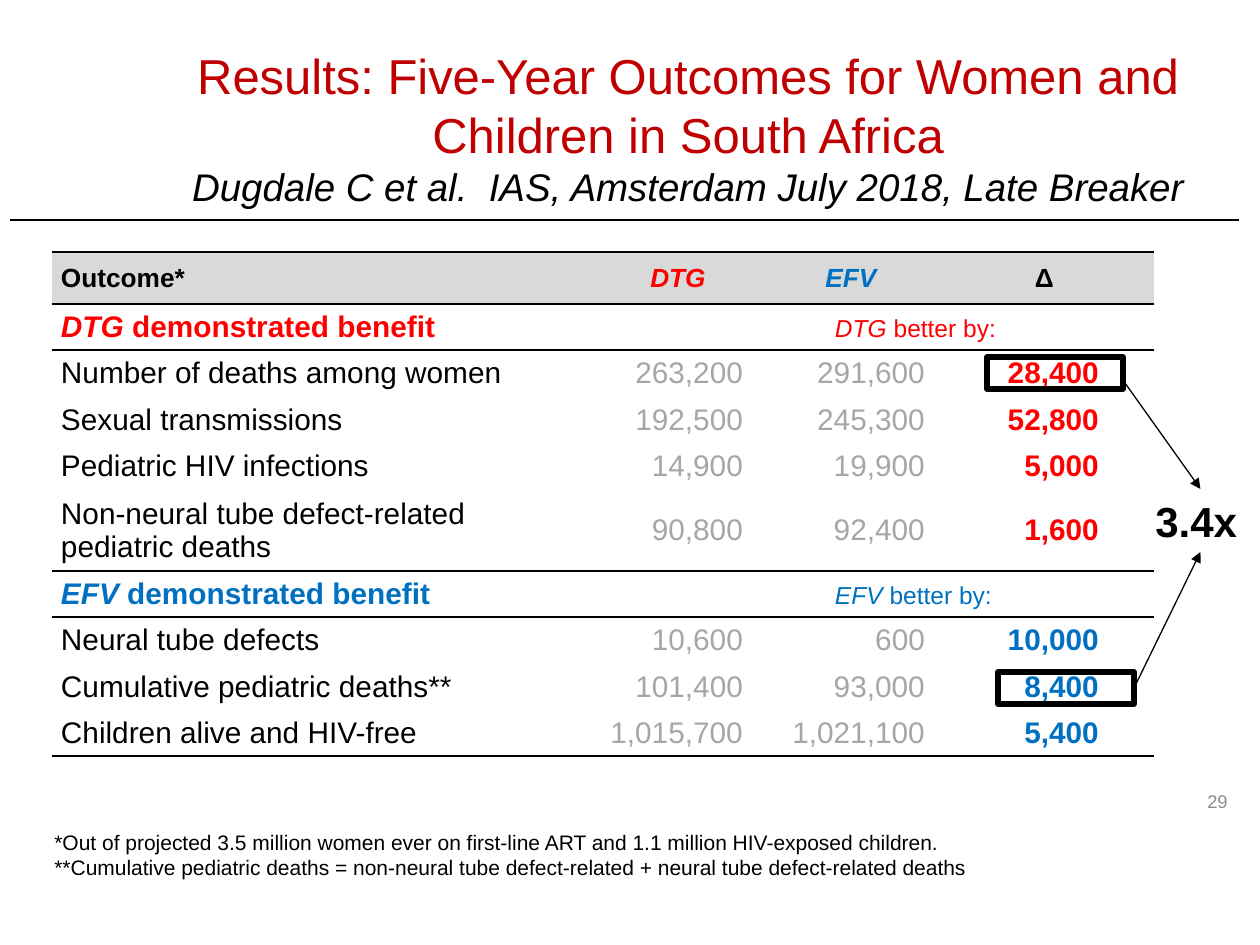
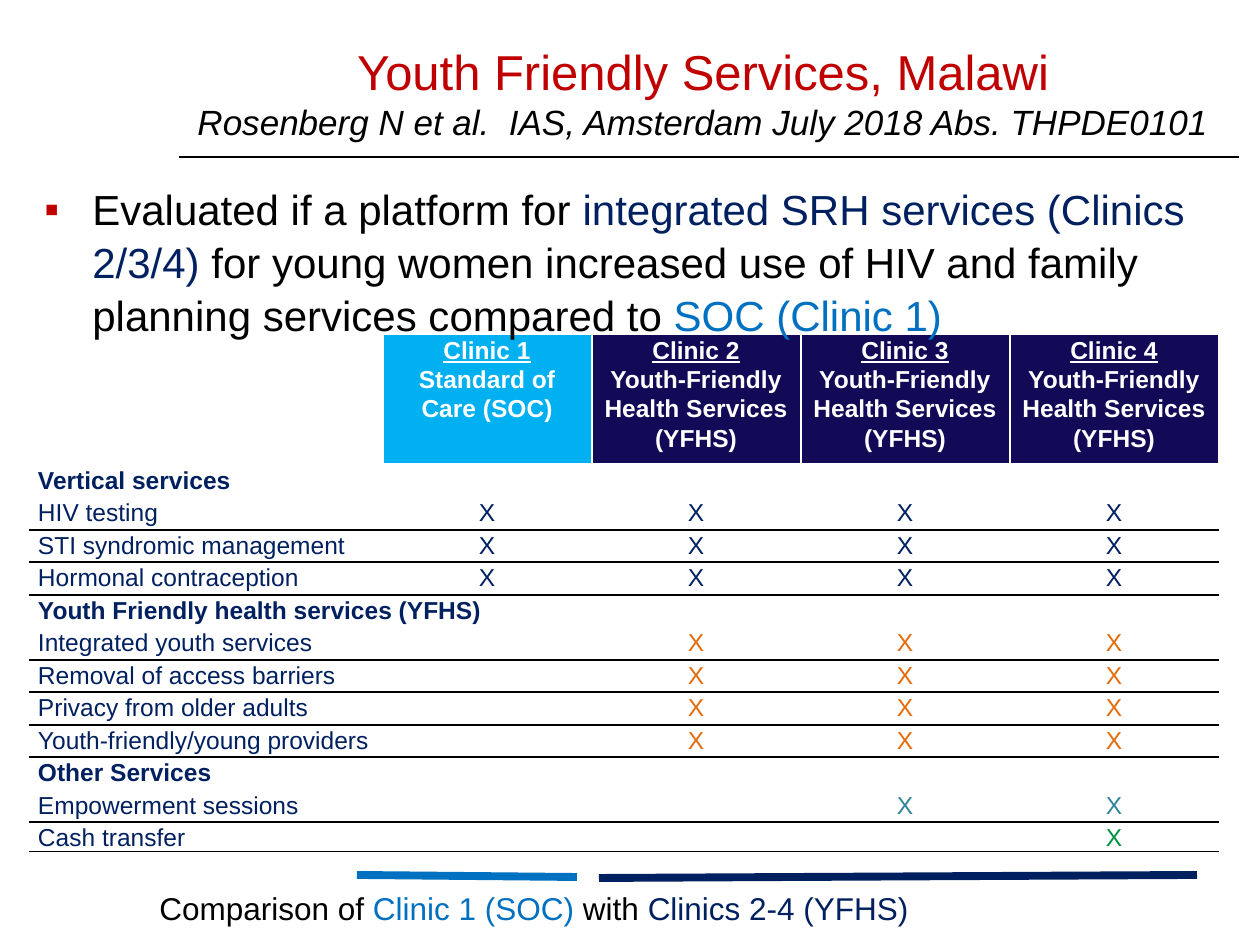
from lxml.etree import SubElement
from pptx import Presentation
from pptx.dml.color import RGBColor
from pptx.enum.shapes import MSO_CONNECTOR, MSO_SHAPE
from pptx.enum.text import MSO_ANCHOR, PP_ALIGN
from pptx.oxml.ns import qn
from pptx.util import Pt

PX = 914400 / 126
FONT = "Arial"
HUE = {
    "black": "000000", "white": "FFFFFF", "title": "C00000", "red": "FF0000",
    "blue": "0070C0", "navy": "002060", "grey": "A6A6A6", "page": "8C8C8C",
    "head": "D9D9D9", "sky": "00B0F0", "deep": "120957", "orange": "E46C0A",
    "teal": "31859C", "green": "009242",
}
SIDE = {"l": PP_ALIGN.LEFT, "c": PP_ALIGN.CENTER, "r": PP_ALIGN.RIGHT}


def put(frame, lines, size, side="l", lead=None):
    frame.word_wrap = True
    for i, parts in enumerate(lines):
        para = frame.add_paragraph() if i else frame.paragraphs[0]
        para.alignment = SIDE[side]
        if lead:
            para.line_spacing = lead
        for text, hue, style, *own in parts:
            if text == "\v":
                para.add_line_break()
                continue
            run = para.add_run()
            run.text = text
            font = run.font
            font.name = FONT
            font.size = Pt(own[0] if own else size)
            font.color.rgb = RGBColor.from_string(HUE[hue])
            font.bold = "b" in style
            font.italic = "i" in style
            font.underline = "u" in style


def draw(slide, ends, hue, width):
    line = slide.shapes.add_connector(
        MSO_CONNECTOR.STRAIGHT, *[round(v * PX) for v in ends])
    line.line.color.rgb = RGBColor.from_string(HUE[hue])
    line.line.width = Pt(width)
    SubElement(line._element.spPr, qn("a:effectLst"))
    return line


deck = Presentation()
deck.slide_width = round(1260 * PX)
deck.slide_height = round(945 * PX)
trial, youth = [deck.slides.add_slide(deck.slide_layouts[6]) for _ in range(2)]

trial_cells = {
    (0, 0): ([[("Outcome*", "black", "b")]], "l", "head", 9, 15),
    (0, 1): ([[("DTG", "red", "bi")]], "c", "head", 9, 15),
    (0, 2): ([[("EFV", "blue", "bi")]], "c", "head", 9, 15),
    (0, 3): ([[("Δ", "black", "b")]], "c", "head", 9, 15),
}
trial_rows = [
    (1, "DTG", "red", [
        ("Number of deaths among women", "263,200", "291,600", "28,400"),
        ("Sexual transmissions", "192,500", "245,300", "52,800"),
        ("Pediatric HIV infections", "14,900", "19,900", "5,000"),
        ("Non-neural tube defect-related pediatric deaths",
         "90,800", "92,400", "1,600")]),
    (6, "EFV", "blue", [
        ("Neural tube defects", "10,600", "600", "10,000"),
        ("Cumulative pediatric deaths**", "101,400", "93,000", "8,400"),
        ("Children alive and HIV-free", "1,015,700", "1,021,100", "5,400")]),
]
trial_spans = [(0, 3, 4)]
for top, drug, hue, rows in trial_rows:
    trial_cells[top, 0] = ([[
        (drug, hue, "bi"), (" demonstrated benefit\t", hue, "b"),
        (drug, hue, "i", 14), (" better by:", hue, "", 14)]], "l", None, 9, 17)
    trial_spans.append((top, 0, 4))
    for r, (name, dtg, efv, gain) in enumerate(rows, top + 1):
        trial_cells[r, 0] = ([[(name, "black", "")]], "l", None, 9, 17)
        trial_cells[r, 1] = ([[(dtg, "grey", "")]], "r", None, 24, 17)
        trial_cells[r, 2] = ([[(efv, "grey", "")]], "r", None, 28, 17)
        trial_cells[r, 4] = ([[(gain, hue, "b")]], "r", None, 55, 17)
        trial_spans.append((r, 2, 3))

youth_cells = {}
for c in range(1, 5):
    kind = "Youth-Friendly Health Services (YFHS)" if c > 1 else "Standard of Care (SOC)"
    youth_cells[0, c] = (
        [[(f"Clinic {c}", "white", "bu")], [(kind, "white", "b")]],
        "c", "deep" if c > 1 else "sky", 10, 14)
youth_rows = [
    ("Vertical services", 0, ""), ("HIV testing", 1, "navy"),
    ("STI syndromic management", 1, "navy"),
    ("Hormonal contraception", 1, "navy"),
    ("Youth Friendly health services (YFHS)", 0, ""),
    ("Integrated youth services", 2, "orange"),
    ("Removal of access barriers", 2, "orange"),
    ("Privacy from older adults", 2, "orange"),
    ("Youth-friendly/young providers", 2, "orange"),
    ("Other Services", 0, ""), ("Empowerment sessions", 3, "teal"),
    ("Cash transfer", 4, "green"),
]
youth_spans = []
youth_rules = [None, ("white", 3)]
for r, (name, first, hue) in enumerate(youth_rows, 1):
    youth_cells[r, 0] = ([[(name, "navy", "" if first else "b")]], "l", None, 10, 14)
    youth_rules.append(("black", 1) if first else None)
    if first:
        for c in range(first, 5):
            youth_cells[r, c] = ([[("X", hue, "")]], "c", None, 10, 14)
    elif r < 10:
        youth_spans.append((r, 0, 4))

trial_rules = [("black", w) if w else None
               for w in (1.5, 1.5, 1.5, 0, 0, 0, 1, 1, 0, 0, 1.5)]
grids = [
    (trial, 52, 252, [537, 178, 168, 18, 201],
     [52, 46, 47, 46, 47, 81, 46, 47, 46, 46],
     trial_cells, trial_spans, trial_rules, None, MSO_ANCHOR.MIDDLE, None),
    (youth, 29, 335, [354] + [209] * 4, [130] + [32, 33] * 5 + [32, 28],
     youth_cells, youth_spans, youth_rules, 1.07, MSO_ANCHOR.TOP, ("white", 1)),
]
for slide, x, y, cols, rows, cells, spans, rules, lead, anchor, wall in grids:
    table = slide.shapes.add_table(
        len(rows), len(cols),
        *[round(v * PX) for v in (x, y, sum(cols), sum(rows))]).table
    table.first_row = table.horz_banding = False
    for c, width in enumerate(cols):
        table.columns[c].width = round(width * PX)
    for r, height in enumerate(rows):
        table.rows[r].height = round(height * PX)
        for c in range(len(cols)):
            cell = table.cell(r, c)
            lines, side, fill, gap, size = cells.get((r, c), ([], "l", None, 9, 14))
            cell.margin_top = cell.margin_bottom = 0
            cell.margin_left = round(9 * PX)
            cell.margin_right = round(gap * PX)
            cell.vertical_anchor = anchor
            if fill or (r == 0 and slide == trial):
                cell.fill.solid()
                cell.fill.fore_color.rgb = RGBColor.from_string(HUE[fill or "head"])
            else:
                cell.fill.background()
            put(cell.text_frame, lines, size, side, lead)
            para = cell.text_frame.paragraphs[0]
            if not lines:
                SubElement(para._p, qn("a:endParaRPr"), sz="1400")
            elif "\t" in para.text:
                tabs = SubElement(para._p.get_or_add_pPr(), qn("a:tabLst"))
                SubElement(tabs, qn("a:tab"), pos=str(round(774 * PX)), algn="l")
            props = cell._tc.get_or_add_tcPr()
            post = None if r else wall
            edges = zip("LRTB", (post, post, rules[r], rules[r + 1]))
            for i, (edge, rule) in enumerate(edges):
                hue, width = rule or ("white", 0)
                line = SubElement(props, qn(f"a:ln{edge}"), w=str(round(width * 12700)))
                if rule:
                    paint = SubElement(line, qn("a:solidFill"))
                    SubElement(paint, qn("a:srgbClr"), val=HUE[hue])
                else:
                    SubElement(line, qn("a:noFill"))
                props.insert(i, line)
    for r, start, end in spans:
        table.cell(r, start).merge(table.cell(r, end))

titles = [
    (trial, (175, 18, 1026, 219),
     "Results: Five-Year Outcomes for Women and Children in South Africa",
     "Dugdale C et al.  IAS, Amsterdam July 2018, Late Breaker", 22),
    (youth, (136, 13, 1134, 158), "Youth Friendly Services, Malawi",
     "Rosenberg N et al.  IAS, Amsterdam July 2018 Abs. THPDE0101", 20),
]
texts = [
    (slide, at, [[(head, "title", "", 28), ("\v", "", ""), (sub, "black", "i")]],
     size, "c", MSO_ANCHOR.MIDDLE, None)
    for slide, at, head, sub, size in titles
] + [
    (trial, (1192, 785, 48, 33), [[("29", "page", "")]], 10.5, "r",
     MSO_ANCHOR.MIDDLE, None),
    (trial, (42, 823, 960, 63), [
        [("*Out of projected 3.5 million women ever on first-line ART and "
          "1.1 million HIV-exposed children.", "black", "")],
        [("**Cumulative pediatric deaths = non-neural tube defect-related + "
          "neural tube defect-related deaths", "black", "")]],
     12, "l", MSO_ANCHOR.TOP, None),
    (youth, (32, 175, 1197, 158), [[
        ("Evaluated if a platform for ", "black", ""),
        ("integrated SRH services (Clinics 2/3/4) ", "navy", ""),
        ("for young women increased use of HIV and family planning services "
         "compared to ", "black", ""),
        ("SOC (Clinic 1)", "blue", "")]], 24, "l", MSO_ANCHOR.TOP, 1.05),
    (youth, (147, 883, 796, 50), [[
        ("Comparison of ", "black", ""), ("Clinic 1 (SOC) ", "blue", ""),
        ("with ", "black", ""), ("Clinics 2-4 (YFHS)", "navy", "")]],
     18, "l", MSO_ANCHOR.TOP, None),
    (trial, (1143, 489, 115, 63), [[("3.4x", "black", "b")]], 24, "l",
     MSO_ANCHOR.TOP, None),
]
for slide, at, lines, size, side, anchor, lead in texts:
    box = slide.shapes.add_textbox(*[round(v * PX) for v in at])
    box.text_frame.vertical_anchor = anchor
    put(box.text_frame, lines, size, side, lead)
    if lead:
        props = box.text_frame.paragraphs[0]._p.get_or_add_pPr()
        props.set("marL", str(round(48 * PX)))
        props.set("indent", str(round(-48 * PX)))
        tint = SubElement(props, qn("a:buClr"))
        SubElement(tint, qn("a:srgbClr"), val=HUE["title"])
        SubElement(props, qn("a:buFont"), typeface=FONT)
        SubElement(props, qn("a:buChar"), char="▪")
ratio = box

for x, y in [(987, 357), (998, 672)]:
    frame = trial.shapes.add_shape(
        MSO_SHAPE.RECTANGLE, *[round(v * PX) for v in (x, y, 136, 32)])
    frame.shadow.inherit = False
    frame.fill.background()
    frame.line.color.rgb = RGBColor.from_string(HUE["black"])
    frame.line.width = Pt(3)

upper = draw(trial, (1125, 383, 1201, 489), "black", 0.75)
upper.end_connect(ratio, 0)
lower = draw(trial, (1134, 688, 1201, 552), "black", 0.75)
lower.begin_connect(frame, 3)
lower.end_connect(ratio, 2)
for arrow in (upper, lower):
    SubElement(arrow.line._get_or_add_ln(), qn("a:tailEnd"), type="triangle")

for slide, ends, hue, width in [
    (trial, (10, 220, 1239, 220), "black", 0.75),
    (youth, (179, 157, 1239, 157), "black", 0.75),
    (youth, (357, 875, 577, 877), "blue", 4.5),
    (youth, (599, 878, 1197, 875), "navy", 4.5),
]:
    draw(slide, ends, hue, width)

deck.save("out.pptx")
